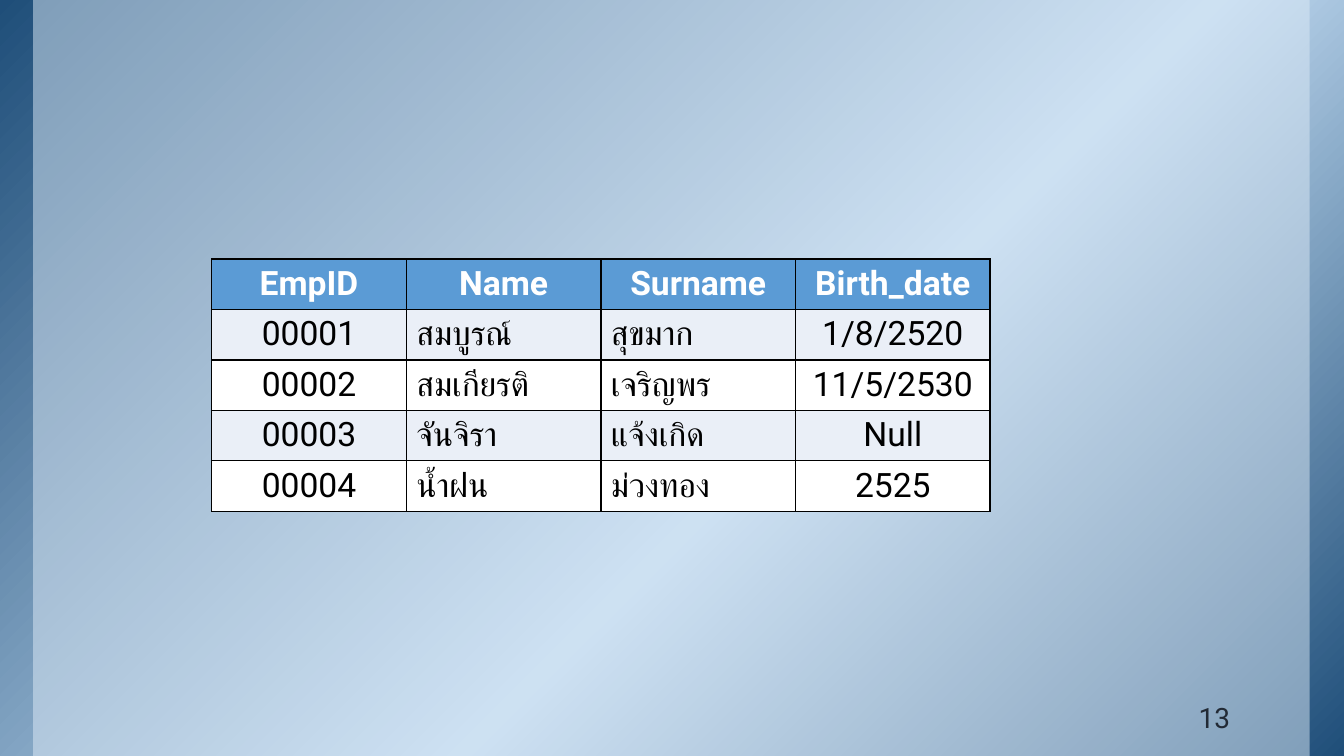
"""Build a slide with an employee table on a blue gradient."""
from copy import deepcopy
from lxml.etree import SubElement as Sub
from pptx import Presentation
from pptx.dml.color import RGBColor
from pptx.enum.shapes import MSO_SHAPE as Shape
from pptx.enum.text import MSO_ANCHOR as Anchor, PP_ALIGN as Align
from pptx.oxml.ns import qn
from pptx.util import Inches, Pt

HEAD = ("EmpID", "Name", "Surname", "Birth_date")
STAFF = [
    ("00001", "สมบูรณ์", "สุขมาก", "1/8/2520"),
    ("00002", "สมเกียรติ", "เจริญพร", "11/5/2530"),
    ("00003", "จันจิรา", "แจ้งเกิด", "Null"),
    ("00004", "น้ำฝน", "ม่วงทอง", "2525"),
]
ALIGNS = (Align.CENTER, Align.LEFT, Align.LEFT, Align.CENTER)
STOPS = [(0, "1F4E79"), (0.58, "BDD7EE"), (1, "1F4E79")]
BANDS = ("FFFFFF", "EAEFF7")
FONT = "Roboto"
PAGE = "13"
WIDE, HIGH = 13.33, 7.5
LEFT, TOP, COL, ROW = 2.1, 2.57, 1.93, 0.49


def color(target, code):
    target.rgb = RGBColor.from_string(code)


def write(frame, text, size, code, align, bold=False):
    para = frame.paragraphs[0]
    para.alignment = align
    run = para.add_run()
    run.text = text
    font = run.font
    font.size, font.name, font.bold = Pt(size), FONT, bold
    color(font.color, code)
    Sub(font._element, qn("a:cs"), typeface=FONT)


def panel(slide, left, width):
    box = slide.shapes.add_shape(
        Shape.RECTANGLE, Inches(left), 0, Inches(width), Inches(HIGH))
    box.shadow.inherit = False
    box.line.fill.background()
    return box


def blend(box):
    box.fill.gradient()
    box.fill.gradient_angle = 315
    stops = box.element.spPr.find(".//" + qn("a:gsLst"))
    stops.append(deepcopy(stops[0]))
    for stop, (place, code) in zip(box.fill.gradient_stops, STOPS):
        stop.position = place
        color(stop.color, code)


def veil(box):
    box.fill.solid()
    color(box.fill.fore_color, "DEEBF7")
    tint = box.element.spPr.find(".//" + qn("a:srgbClr"))
    Sub(tint, qn("a:alpha"), val="50000")


def border(cell):
    props = cell._tc.get_or_add_tcPr()
    for spot, side in enumerate(("lnL", "lnR", "lnT", "lnB")):
        line = Sub(props, qn("a:" + side), w=str(Pt(1)))
        props.insert(spot, line)
        fill = Sub(line, qn("a:solidFill"))
        Sub(fill, qn("a:srgbClr"), val="000000")


def grid(slide):
    rows = [HEAD] + STAFF
    table = slide.shapes.add_table(
        len(rows), len(HEAD), Inches(LEFT), Inches(TOP),
        Inches(COL * len(HEAD)), Inches(ROW * len(rows))).table
    for r, row in enumerate(rows):
        top = r == 0
        for c, text in enumerate(row):
            cell = table.cell(r, c)
            cell.fill.solid()
            color(cell.fill.fore_color, "5B9BD5" if top else BANDS[r % 2])
            border(cell)
            write(cell.text_frame, text, 24, "FFFFFF" if top else "000000",
                  Align.CENTER if top else ALIGNS[c], top)


def number(slide):
    box = slide.shapes.add_textbox(
        Inches(11.12), Inches(7), Inches(1.21), Inches(0.35))
    frame = box.text_frame
    frame.word_wrap = True
    frame.vertical_anchor = Anchor.BOTTOM
    frame.margin_left = frame.margin_right = Inches(0.13)
    frame.margin_top = frame.margin_bottom = Inches(0.07)
    write(frame, PAGE, 20, "222A35", Align.RIGHT)


def main():
    deck = Presentation()
    deck.slide_width, deck.slide_height = Inches(WIDE), Inches(HIGH)
    slide = deck.slides.add_slide(deck.slide_layouts[6])
    blend(panel(slide, 0, WIDE))
    veil(panel(slide, 0.33, 12.66))
    number(slide)
    grid(slide)
    deck.save("out.pptx")


if __name__ == "__main__":
    main()
